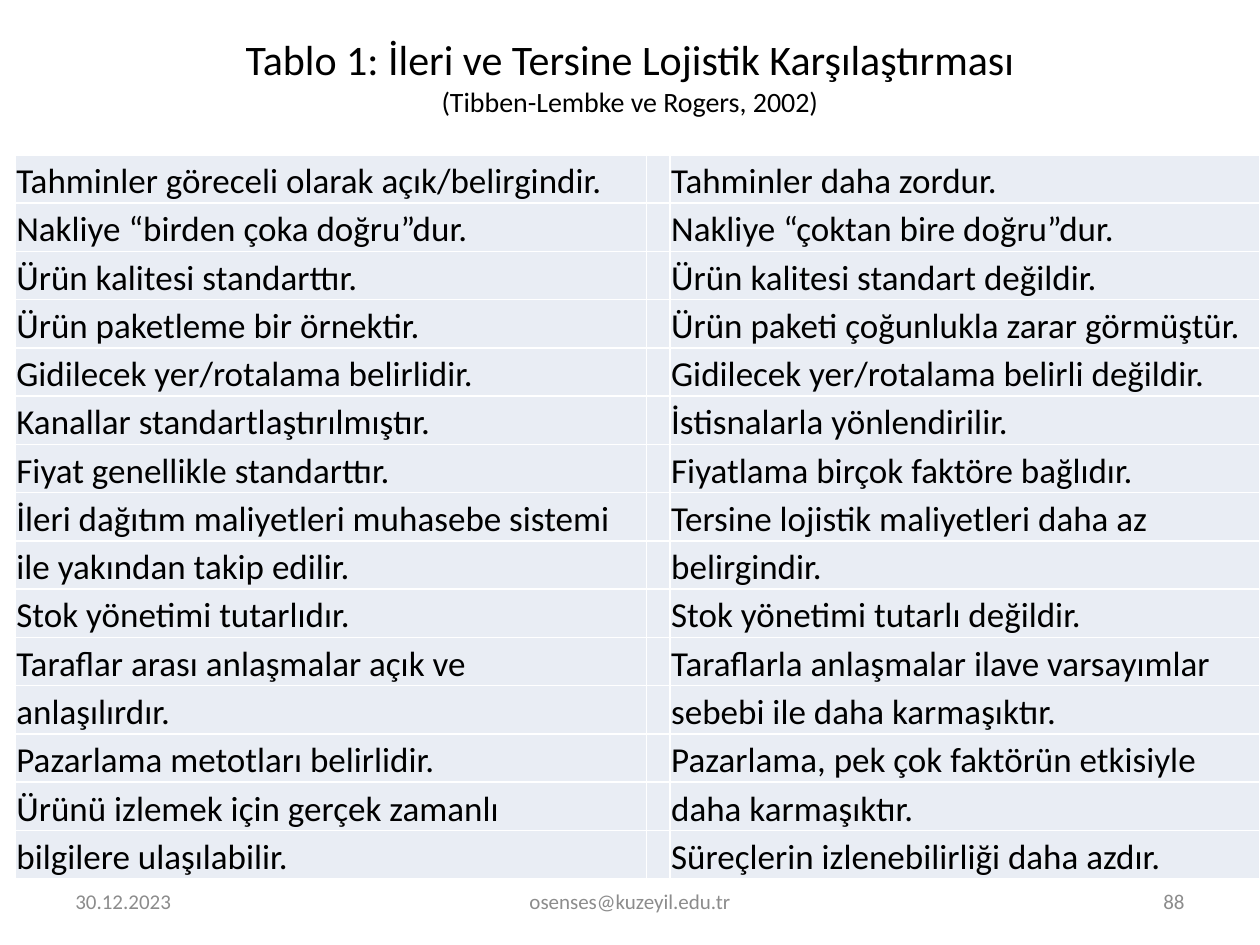
import pptx
import pptx.dml.color
import pptx.enum.text
import pptx.oxml
import pptx.oxml.ns
import pptx.util
from lxml import etree

Cm = pptx.util.Cm
Pt = pptx.util.Pt
Align = pptx.enum.text.PP_ALIGN
Anchor = pptx.enum.text.MSO_ANCHOR
qn = pptx.oxml.ns.qn

BLACK = pptx.dml.color.RGBColor(0x00, 0x00, 0x00)
WHITE = pptx.dml.color.RGBColor(0xFF, 0xFF, 0xFF)
GREY = pptx.dml.color.RGBColor(0x8C, 0x8C, 0x8C)
PALE_BLUE = pptx.dml.color.RGBColor(0xE9, 0xED, 0xF4)

COLUMN_WIDTHS = (12.72, 0.48, 11.89)
TABLE_HEIGHT = 14.6
COMPARISON = (
    ("Tahminler göreceli olarak açık/belirgindir.", "Tahminler daha zordur."),
    ("Nakliye “birden çoka doğru”dur.", "Nakliye “çoktan bire doğru”dur."),
    ("Ürün kalitesi standarttır.", "Ürün kalitesi standart değildir."),
    ("Ürün paketleme bir örnektir.", "Ürün paketi çoğunlukla zarar görmüştür."),
    ("Gidilecek yer/rotalama belirlidir.", "Gidilecek yer/rotalama belirli değildir."),
    ("Kanallar standartlaştırılmıştır.", "İstisnalarla yönlendirilir."),
    ("Fiyat genellikle standarttır.", "Fiyatlama birçok faktöre bağlıdır."),
    ("İleri dağıtım maliyetleri muhasebe sistemi", "Tersine lojistik maliyetleri daha az"),
    ("ile yakından takip edilir.", "belirgindir."),
    ("Stok yönetimi tutarlıdır.", "Stok yönetimi tutarlı değildir."),
    ("Taraflar arası anlaşmalar açık ve", "Taraflarla anlaşmalar ilave varsayımlar"),
    ("anlaşılırdır.", "sebebi ile daha karmaşıktır."),
    ("Pazarlama metotları belirlidir.", "Pazarlama, pek çok faktörün etkisiyle"),
    ("Ürünü izlemek için gerçek zamanlı", "daha karmaşıktır."),
    ("bilgilere ulaşılabilir.", "Süreçlerin izlenebilirliği daha azdır."),
)
FOOTERS = (
    ("30.12.2023", 1.27, 5.93, Align.LEFT),
    ("osenses@kuzeyil.edu.tr", 8.68, 8.04, Align.CENTER),
    ("88", 18.2, 5.93, Align.RIGHT),
)


def write_text(paragraph, text, size=20, color=BLACK, align=Align.LEFT):
    paragraph.alignment = align
    run = paragraph.add_run()
    run.text = text
    run.font.name = "Calibri"
    run.font.size = Pt(size)
    run.font.color.rgb = color


def add_title(slide):
    title = slide.shapes.title
    title.left, title.top, title.width, title.height = Cm(1.27), Cm(0.33), Cm(22.86), Cm(2.39)
    title.text_frame.vertical_anchor = Anchor.MIDDLE
    paragraph = title.text_frame.paragraphs[0]
    write_text(paragraph, "Tablo 1: İleri ve Tersine Lojistik Karşılaştırması", size=24, align=Align.CENTER)
    paragraph.add_line_break()
    write_text(paragraph, "(Tibben-Lembke ve Rogers, 2002)", size=16, align=Align.CENTER)


def set_borders(cell):
    properties = cell._tc.get_or_add_tcPr()
    for side in ("a:lnL", "a:lnR", "a:lnT", "a:lnB"):
        line = etree.SubElement(properties, qn(side), w=str(Pt(1)))
        fill = etree.SubElement(line, qn("a:solidFill"))
        etree.SubElement(fill, qn("a:srgbClr"), val=str(WHITE))


def format_cell(cell):
    set_borders(cell)
    cell.fill.solid()
    cell.fill.fore_color.rgb = PALE_BLUE
    cell.vertical_anchor = Anchor.BOTTOM
    cell.margin_left = cell.margin_right = cell.margin_top = Cm(0.02)
    cell.margin_bottom = 0


def add_comparison_table(slide):
    frame = slide.shapes.add_table(
        len(COMPARISON), len(COLUMN_WIDTHS), Cm(0.31), Cm(3.12),
        Cm(sum(COLUMN_WIDTHS)), Cm(TABLE_HEIGHT))
    table = frame.table
    table.first_row = False
    table.horz_banding = False
    for column, width in zip(table.columns, COLUMN_WIDTHS):
        column.width = Cm(width)
    for row, (forward, reverse) in zip(table.rows, COMPARISON):
        row.height = Cm(TABLE_HEIGHT / len(COMPARISON))
        for cell, text in zip(row.cells, (forward, "", reverse)):
            format_cell(cell)
            if text:
                write_text(cell.text_frame.paragraphs[0], text)


def add_footer(slide, text, left, width, align):
    footer = slide.shapes.add_textbox(Cm(left), Cm(17.65), Cm(width), Cm(1.02))
    footer.text_frame.word_wrap = True
    footer.text_frame.vertical_anchor = Anchor.MIDDLE
    write_text(footer.text_frame.paragraphs[0], text, size=12, color=GREY, align=align)


def main():
    presentation = pptx.Presentation()
    presentation.slide_width = Cm(25.4)
    presentation.slide_height = Cm(19.05)
    slide = presentation.slides.add_slide(presentation.slide_layouts[5])
    add_title(slide)
    add_comparison_table(slide)
    for text, left, width, align in FOOTERS:
        add_footer(slide, text, left, width, align)
    presentation.save("out.pptx")


if __name__ == "__main__":
    main()
